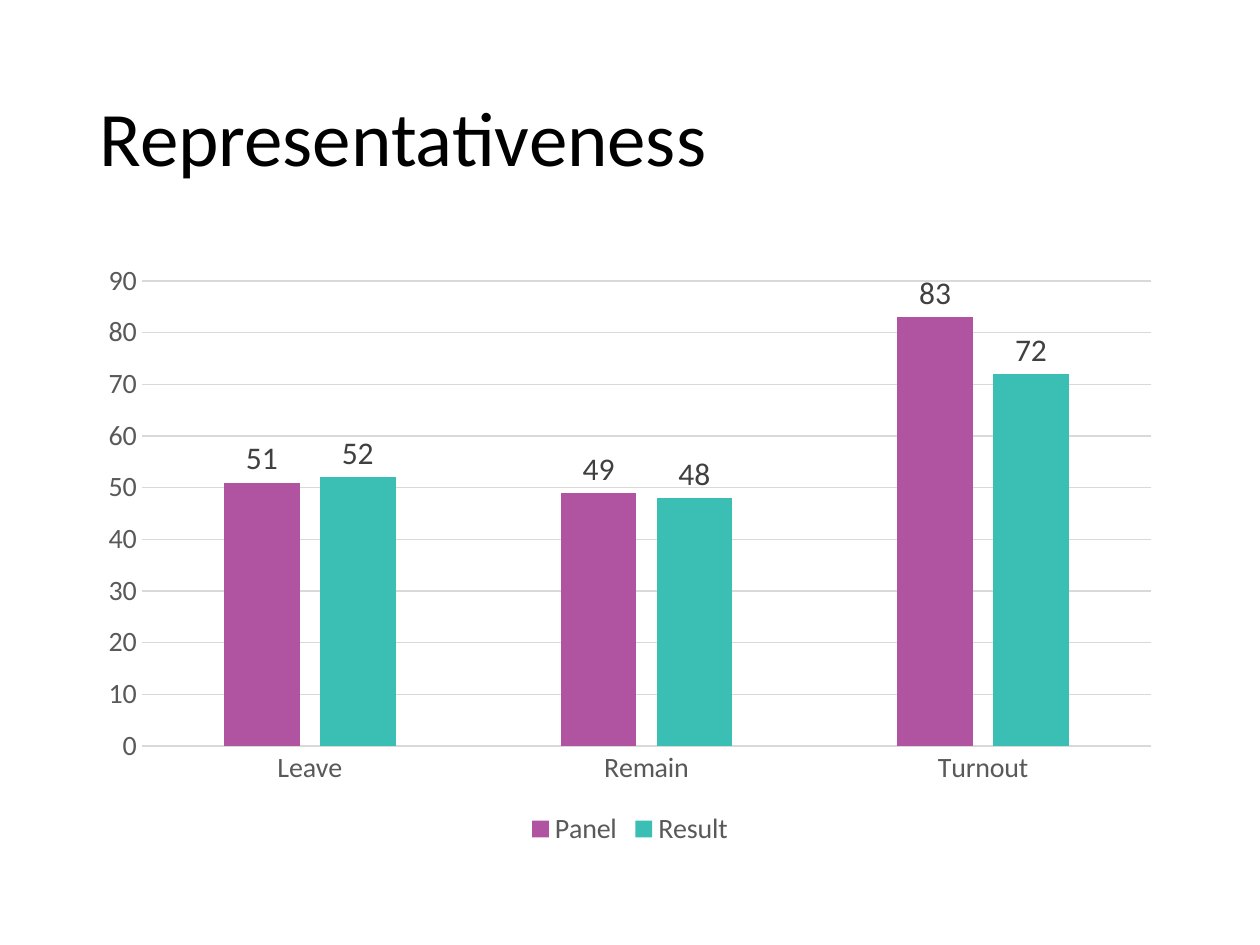
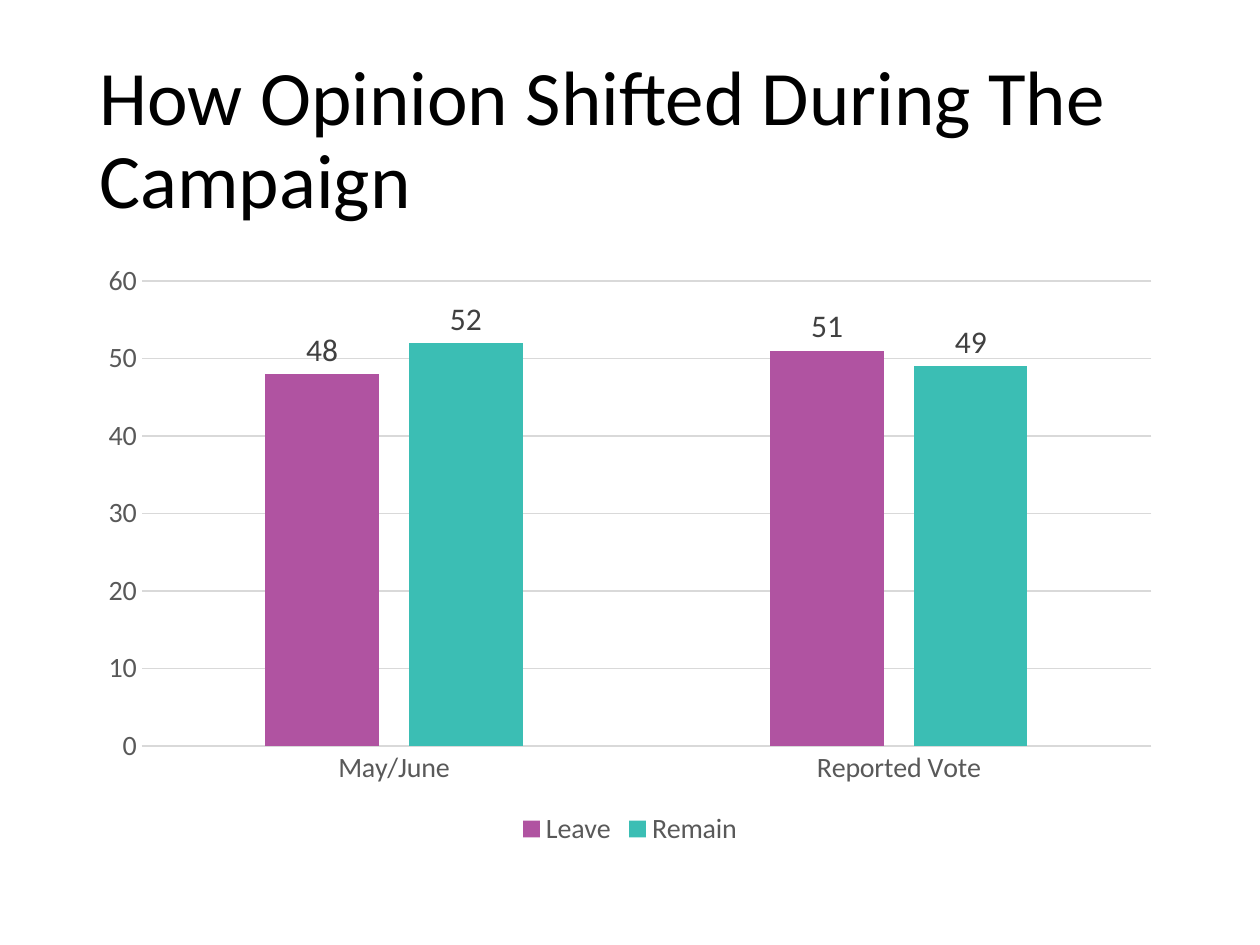
from dataclasses import dataclass

from pptx import Presentation
from pptx.chart.data import CategoryChartData
from pptx.dml.color import RGBColor
from pptx.enum import chart as chart_enum, text as text_enum
from pptx.util import Inches, Pt

SLIDES = [
    {
        "title": "Representativeness",
        "categories": ["Leave", "Remain", "Turnout"],
        "series": {"Panel": [51, 49, 83], "Result": [52, 48, 72]},
        "axis_maximum": 90,
    },
    {
        "title": "How Opinion Shifted During The Campaign",
        "categories": ["May/June", "Reported Vote"],
        "series": {"Leave": [48, 51], "Remain": [52, 49]},
        "axis_maximum": 60,
    },
]


@dataclass(frozen=True)
class Theme:
    font: str = "Calibri"
    title_color: str = "000000"
    axis_color: str = "595959"
    label_color: str = "404040"
    grid_color: str = "D9D9D9"
    series_colors: tuple = ("B053A1", "3BBEB4")
    title_size: int = 44
    chart_size: int = 10
    axis_size: int = 16
    label_size: int = 18
    line_width: float = 0.75


THEME = Theme()
SLIDE_WIDTH, SLIDE_HEIGHT = 10, 7.5
MARGIN = 0.69
CONTENT_WIDTH = SLIDE_WIDTH - 2 * MARGIN
TITLE_TOP, TITLE_HEIGHT = 0.4, 1.45
CHART_TOP, CHART_HEIGHT = 2, 4.76


def box(top, height):
    """Return left, top, width and height of a full-width content area."""
    return Inches(MARGIN), Inches(top), Inches(CONTENT_WIDTH), Inches(height)


def style_font(font, size, color):
    font.name = THEME.font
    font.size = Pt(size)
    font.bold = False
    font.color.rgb = RGBColor.from_string(color)


def style_line(line):
    line.width = Pt(THEME.line_width)
    line.color.rgb = RGBColor.from_string(THEME.grid_color)


def add_title(slide, title):
    shape = slide.shapes.title
    shape.left, shape.top, shape.width, shape.height = box(TITLE_TOP, TITLE_HEIGHT)
    frame = shape.text_frame
    frame.text = title
    frame.word_wrap = True
    frame.auto_size = text_enum.MSO_AUTO_SIZE.NONE
    frame.vertical_anchor = text_enum.MSO_ANCHOR.MIDDLE
    paragraph = frame.paragraphs[0]
    paragraph.alignment = text_enum.PP_ALIGN.LEFT
    paragraph.line_spacing = 0.9
    style_font(paragraph.runs[0].font, THEME.title_size, THEME.title_color)


def style_axes(chart, maximum):
    for axis in (chart.category_axis, chart.value_axis):
        axis.major_tick_mark = chart_enum.XL_TICK_MARK.NONE
        axis.minor_tick_mark = chart_enum.XL_TICK_MARK.NONE
        style_font(axis.tick_labels.font, THEME.axis_size, THEME.axis_color)
    style_line(chart.category_axis.format.line)

    value_axis = chart.value_axis
    value_axis.minimum_scale = 0
    value_axis.maximum_scale = maximum
    value_axis.major_unit = 10
    value_axis.format.line.fill.background()
    style_line(value_axis.major_gridlines.format.line)


def style_series(series, color):
    series.format.fill.solid()
    series.format.fill.fore_color.rgb = RGBColor.from_string(color)
    series.invert_if_negative = False
    labels = series.data_labels
    labels.show_value = True
    labels.position = chart_enum.XL_LABEL_POSITION.OUTSIDE_END
    style_font(labels.font, THEME.label_size, THEME.label_color)


def add_column_chart(slide, content):
    data = CategoryChartData(number_format="General")
    data.categories = content["categories"]
    for name, values in content["series"].items():
        data.add_series(name, values)
    chart = slide.shapes.add_chart(
        chart_enum.XL_CHART_TYPE.COLUMN_CLUSTERED, *box(CHART_TOP, CHART_HEIGHT), data
    ).chart
    chart.has_title = False
    style_font(chart.font, THEME.chart_size, THEME.title_color)

    chart.has_legend = True
    chart.legend.position = chart_enum.XL_LEGEND_POSITION.BOTTOM
    chart.legend.include_in_layout = False
    style_font(chart.legend.font, THEME.axis_size, THEME.axis_color)

    style_axes(chart, content["axis_maximum"])
    plot = chart.plots[0]
    plot.vary_by_categories = False
    plot.gap_width = 219
    plot.overlap = -27
    for series, color in zip(plot.series, THEME.series_colors):
        style_series(series, color)


def main():
    presentation = Presentation()
    presentation.slide_width = Inches(SLIDE_WIDTH)
    presentation.slide_height = Inches(SLIDE_HEIGHT)
    title_only = presentation.slide_layouts.get_by_name("Title Only")
    for content in SLIDES:
        slide = presentation.slides.add_slide(title_only)
        add_title(slide, content["title"])
        add_column_chart(slide, content)
    presentation.save("out.pptx")


if __name__ == "__main__":
    main()
